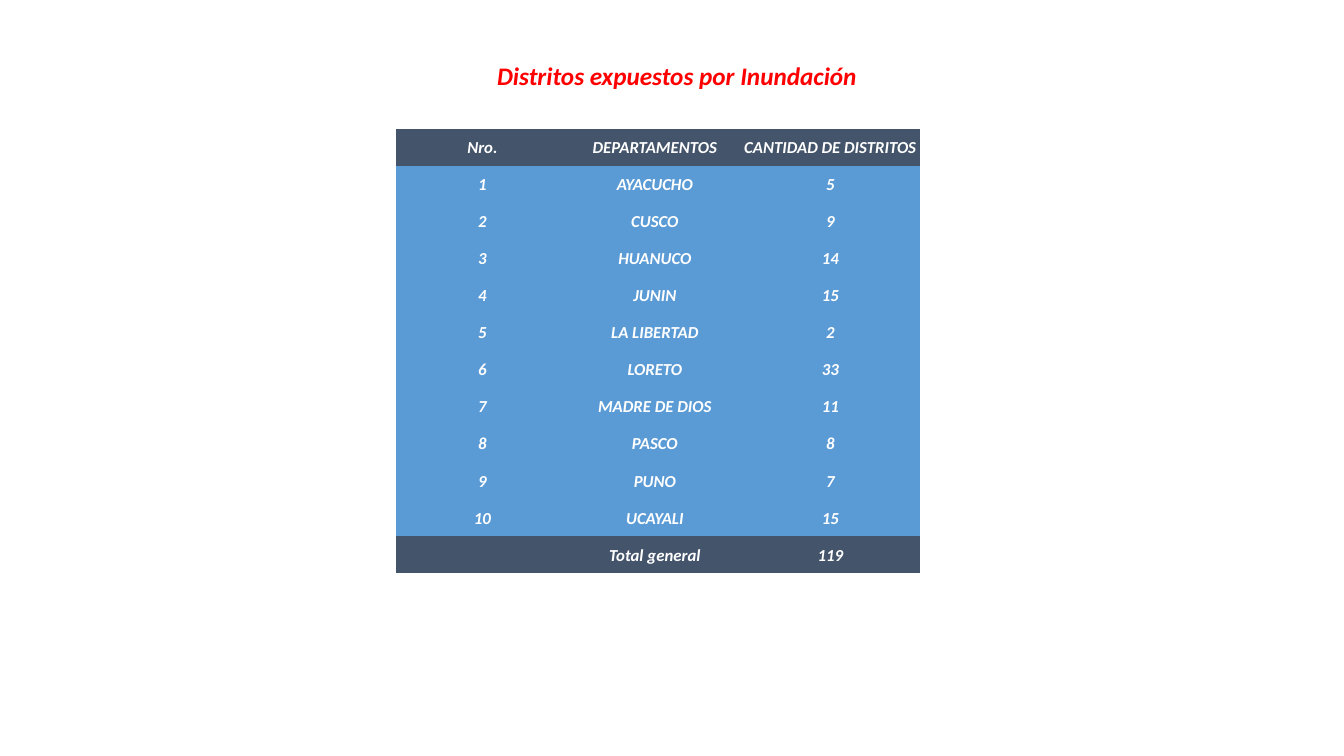
from dataclasses import dataclass

from pptx import Presentation
from pptx.dml.color import RGBColor
from pptx.enum.text import MSO_ANCHOR, MSO_AUTO_SIZE, PP_ALIGN
from pptx.oxml.ns import qn
from pptx.util import Inches, Pt

CENTER = PP_ALIGN.CENTER
MIDDLE = MSO_ANCHOR.MIDDLE
FIT_SHAPE = MSO_AUTO_SIZE.SHAPE_TO_FIT_TEXT

RED = RGBColor(0xFF, 0x00, 0x00)
WHITE = RGBColor(0xFF, 0xFF, 0xFF)
SLATE = RGBColor(0x44, 0x54, 0x6A)
BLUE = RGBColor(0x5B, 0x9B, 0xD5)

FONT = "Calibri"
PLAIN_TABLE_STYLE = "{2D5ABB26-0587-4C30-8999-92F81FD0307C}"
SLIDE_WIDTH = Inches(13.33)
SLIDE_HEIGHT = Inches(7.5)

# Percentages of the slide's width and height
COLUMN_WIDTHS = (12.83, 12.83, 13.28)
ROW_HEIGHT = 4.9


@dataclass(frozen=True)
class Department:
    name: str
    districts: int


@dataclass(frozen=True)
class TableRow:
    texts: tuple[str, str, str]
    fill: RGBColor


DEPARTMENTS = (
    Department("AYACUCHO", 5),
    Department("CUSCO", 9),
    Department("HUANUCO", 14),
    Department("JUNIN", 15),
    Department("LA LIBERTAD", 2),
    Department("LORETO", 33),
    Department("MADRE DE DIOS", 11),
    Department("PASCO", 8),
    Department("PUNO", 7),
    Department("UCAYALI", 15),
)


def across(percent: float) -> int:
    return round(SLIDE_WIDTH * percent / 100)


def down(percent: float) -> int:
    return round(SLIDE_HEIGHT * percent / 100)


def write_text(frame, text: str, *, size: float, color: RGBColor) -> None:
    """Write one centred bold italic line into a text frame."""
    paragraph = frame.paragraphs[0]
    paragraph.alignment = CENTER
    run = paragraph.add_run()
    run.text = text
    run.font.name = FONT
    run.font.size = Pt(size)
    run.font.bold = True
    run.font.italic = True
    run.font.color.rgb = color


def table_rows() -> list[TableRow]:
    """Header, one numbered row per department, and the total."""
    total = sum(department.districts for department in DEPARTMENTS)
    return [
        TableRow(("Nro.", "DEPARTAMENTOS", "CANTIDAD DE DISTRITOS"), SLATE),
        *(
            TableRow((str(number), department.name, str(department.districts)), BLUE)
            for number, department in enumerate(DEPARTMENTS, start=1)
        ),
        TableRow(("", "Total general", str(total)), SLATE),
    ]


def add_title(slide) -> None:
    title = slide.shapes.add_textbox(
        across(36.08), down(7.33), across(28.58), down(5.33)
    )
    title.text_frame.word_wrap = False
    title.text_frame.auto_size = FIT_SHAPE
    write_text(
        title.text_frame, "Distritos expuestos por Inundación", size=18, color=RED
    )


def fill_cell(cell, text: str, fill: RGBColor) -> None:
    cell.fill.solid()
    cell.fill.fore_color.rgb = fill
    cell.vertical_anchor = MIDDLE
    cell.margin_left = cell.margin_right = cell.margin_top = Inches(0.01)
    cell.margin_bottom = 0
    if text:
        write_text(cell.text_frame, text, size=12, color=WHITE)


def add_district_table(slide) -> None:
    rows = table_rows()
    table = slide.shapes.add_table(
        len(rows),
        len(COLUMN_WIDTHS),
        across(29.48),
        down(17.07),
        across(sum(COLUMN_WIDTHS)),
        down(ROW_HEIGHT * len(rows)),
    ).table
    table.horz_banding = False
    table._tbl.tblPr.find(qn("a:tableStyleId")).text = PLAIN_TABLE_STYLE
    for column, width in zip(table.columns, COLUMN_WIDTHS):
        column.width = across(width)
    for table_row, row in zip(table.rows, rows):
        table_row.height = down(ROW_HEIGHT)
        for cell, text in zip(table_row.cells, row.texts):
            fill_cell(cell, text, row.fill)


def main() -> None:
    presentation = Presentation()
    presentation.slide_width = SLIDE_WIDTH
    presentation.slide_height = SLIDE_HEIGHT
    slide = presentation.slides.add_slide(presentation.slide_layouts[6])
    add_title(slide)
    add_district_table(slide)
    presentation.save("out.pptx")


if __name__ == "__main__":
    main()
